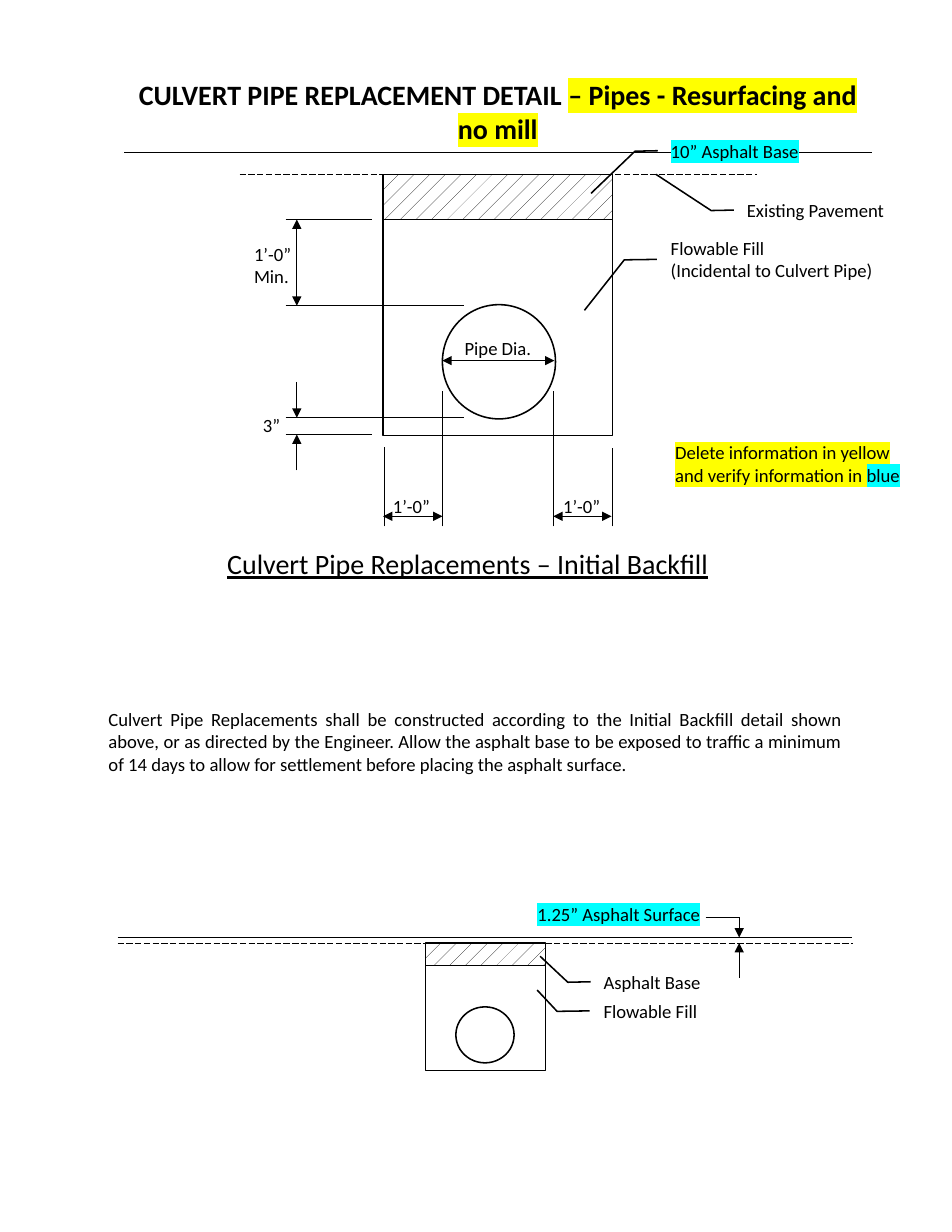
from dataclasses import dataclass
from lxml.etree import SubElement
from pptx import Presentation
from pptx.dml.color import RGBColor
from pptx.enum.dml import MSO_LINE, MSO_PATTERN
from pptx.enum.shapes import MSO_CONNECTOR, MSO_SHAPE
from pptx.enum.text import MSO_ANCHOR, MSO_AUTO_SIZE, PP_ALIGN
from pptx.oxml.ns import qn
from pptx.util import Inches, Pt


@dataclass(frozen=True)
class Theme:
    font: str = "Calibri"
    black: str = "000000"
    white: str = "FFFFFF"
    yellow: str = "FFFF00"
    blue: str = "00FFFF"
    title: int = 18
    body: int = 12
    thin: float = 0.5
    thick: float = 1


theme = Theme()
black = RGBColor.from_string(theme.black)
white = RGBColor.from_string(theme.white)


def write(tf, paragraphs, size=theme.body, align=PP_ALIGN.LEFT, bold=False, underline=False):
    for i, runs in enumerate(paragraphs):
        p = tf.add_paragraph() if i else tf.paragraphs[0]
        p.alignment = align
        for text, highlight in runs:
            r = p.add_run()
            r.text = text
            r.font.size = Pt(size)
            r.font.bold = bold
            r.font.underline = underline
            r.font.color.rgb = black
            r.font.name = theme.font
            if highlight:
                rPr = r.font._element
                mark = SubElement(rPr, qn("a:highlight"))
                SubElement(mark, qn("a:srgbClr"), val=highlight)
                rPr.find(qn("a:solidFill")).addnext(mark)


def add_line(x1, y1, x2, y2, arrows="", width=theme.thin, dash=None):
    s = slide.shapes.add_connector(
        MSO_CONNECTOR.STRAIGHT, Inches(x1), Inches(y1), Inches(x2), Inches(y2))
    s.line.color.rgb = black
    s.line.width = Pt(width)
    if dash:
        s.line.dash_style = dash
    for end in arrows.split():
        SubElement(s.line._get_or_add_ln(), qn(f"a:{end}End"), type="triangle")
    SubElement(s._element.spPr, qn("a:effectLst"))


prs = Presentation()
prs.slide_width, prs.slide_height = Inches(8.5), Inches(11)
slide = prs.slides.add_slide(prs.slide_layouts[6])

table = slide.shapes.add_table(
    1, 1, Inches(1.1), Inches(0.65), Inches(6.69), Inches(0.41)).table
table.first_row = table.horz_banding = False
cell = table.cell(0, 0)
tcPr = cell._tc.get_or_add_tcPr()
for side, color in (("L", theme.white), ("R", theme.white),
                    ("T", theme.white), ("B", theme.black)):
    ln = SubElement(tcPr, qn(f"a:ln{side}"), w=str(Pt(theme.thick)))
    SubElement(SubElement(ln, qn("a:solidFill")), qn("a:srgbClr"), val=color)
cell.fill.background()
write(cell.text_frame,
      [[("CULVERT PIPE REPLACEMENT DETAIL ", None),
        ("– Pipes - Resurfacing and no mill", theme.yellow)]],
      theme.title, PP_ALIGN.CENTER, bold=True)

add_line(2.14, 1.56, 6.76, 1.56, dash=MSO_LINE.LONG_DASH)
add_line(1.05, 8.42, 7.62, 8.42, dash=MSO_LINE.LONG_DASH)
add_line(1.05, 8.37, 7.61, 8.37, width=theme.thick)

for kind, x, y, w, h, hatched in (
    (MSO_SHAPE.RECTANGLE, 3.42, 1.96, 2.05, 1.93, False),
    (MSO_SHAPE.RECTANGLE, 3.42, 1.56, 2.05, 0.4, True),
    (MSO_SHAPE.OVAL, 3.95, 2.72, 1.01, 1.02, False),
    (MSO_SHAPE.RECTANGLE, 3.8, 8.61, 1.07, 0.95, False),
    (MSO_SHAPE.RECTANGLE, 3.8, 8.42, 1.07, 0.2, True),
    (MSO_SHAPE.OVAL, 4.07, 8.99, 0.52, 0.5, False),
):
    s = slide.shapes.add_shape(kind, Inches(x), Inches(y), Inches(w), Inches(h))
    s.shadow.inherit = False
    s.line.color.rgb = black
    s.line.width = Pt(theme.thick)
    if hatched:
        s.fill.patterned()
        s.fill.pattern = MSO_PATTERN.PERCENT_5
        s.fill.fore_color.rgb = black
        s.fill.back_color.rgb = white
    else:
        s.fill.background()

for y, right in ((1.96, 3.32), (3.88, 3.32), (2.73, 4.14), (3.73, 4.14)):
    add_line(2.55, y, right, y)
for x, top in ((3.95, 3.49), (4.94, 3.49), (3.43, 3.99), (5.47, 4)):
    add_line(x, 4.7, x, top)
for ends in ((3.95, 3.22, 4.95, 3.22), (2.65, 1.96, 2.65, 2.73),
             (3.95, 4.61, 3.42, 4.61), (5.46, 4.61, 4.94, 4.61)):
    add_line(*ends, arrows="head tail")
for ends in ((2.65, 3.41, 2.65, 3.73), (2.65, 4.2, 2.65, 3.88),
             (6.6, 8.73, 6.6, 8.42), (6.6, 8.19, 6.6, 8.37)):
    add_line(*ends, arrows="tail")
add_line(6.3, 8.19, 6.6, 8.19)

for x, y, w, tip_y, tip_x, lines, highlight in (
    (5.89, 1.17, 1.61, 1.59, -0.381, ["10” Asphalt Base"], theme.blue),
    (5.89, 2.14, 2.31, 1.803, -0.291,
     ["Flowable Fill", "(Incidental to Culvert Pipe)"], None),
    (6.57, 1.7, 1.61, -0.41, -0.443, ["Existing Pavement"], None),
    (5.29, 8.59, 1.61, -0.15, -0.291, ["Asphalt Base"], None),
    (5.29, 8.85, 2.31, -0.03, -0.214, ["Flowable Fill"], None),
):
    s = slide.shapes.add_shape(MSO_SHAPE.LINE_CALLOUT_2_NO_BORDER,
                               Inches(x), Inches(y), Inches(w), Inches(0.35))
    for i, value in enumerate((0.502, -0.011, 0.515, -0.137, tip_y, tip_x)):
        s.adjustments[i] = value
    s.shadow.inherit = False
    s.fill.background()
    s.line.color.rgb = black
    s.line.width = Pt(theme.thick)
    s.text_frame.vertical_anchor = MSO_ANCHOR.MIDDLE
    write(s.text_frame, [[(text, highlight)] for text in lines])

note = ("Culvert Pipe Replacements shall be constructed according to the Initial "
        "Backfill detail shown above, or as directed by the Engineer. Allow the asphalt "
        "base to be exposed to traffic a minimum of 14 days to allow for settlement "
        "before placing the asphalt surface.")
for x, y, w, h, wrap, paragraphs, style in (
    (3.41, 4.37, 0.54, 0.3, False, [[("1’-0”", None)]], {}),
    (4.93, 4.37, 0.54, 0.3, False, [[("1’-0”", None)]], {}),
    (4.05, 2.96, 0.8, 0.3, False, [[("Pipe Dia.", None)]], {}),
    (2.25, 3.65, 0.36, 0.3, False, [[("3”", None)]], {}),
    (2.17, 2.12, 0.54, 0.5, False, [[("1’-0”", None)], [("Min.", None)]], {}),
    (1.93, 4.83, 4.65, 0.4, False,
     [[("Culvert Pipe Replacements – Initial Backfill", None)]],
     {"size": theme.title, "underline": True}),
    (0.87, 6.27, 6.75, 0.71, True, [[(note, None)]], {"align": PP_ALIGN.JUSTIFY}),
    (4.7, 8.01, 1.66, 0.3, True, [[("1.25” Asphalt Surface", theme.blue)]], {}),
    (5.93, 3.89, 2.31, 0.5, True,
     [[("Delete information in yellow and verify information in ", theme.yellow),
       ("blue", theme.blue)]], {}),
):
    tf = slide.shapes.add_textbox(Inches(x), Inches(y), Inches(w), Inches(h)).text_frame
    tf.word_wrap = wrap
    tf.auto_size = MSO_AUTO_SIZE.SHAPE_TO_FIT_TEXT
    write(tf, paragraphs, **style)

prs.save("out.pptx")
